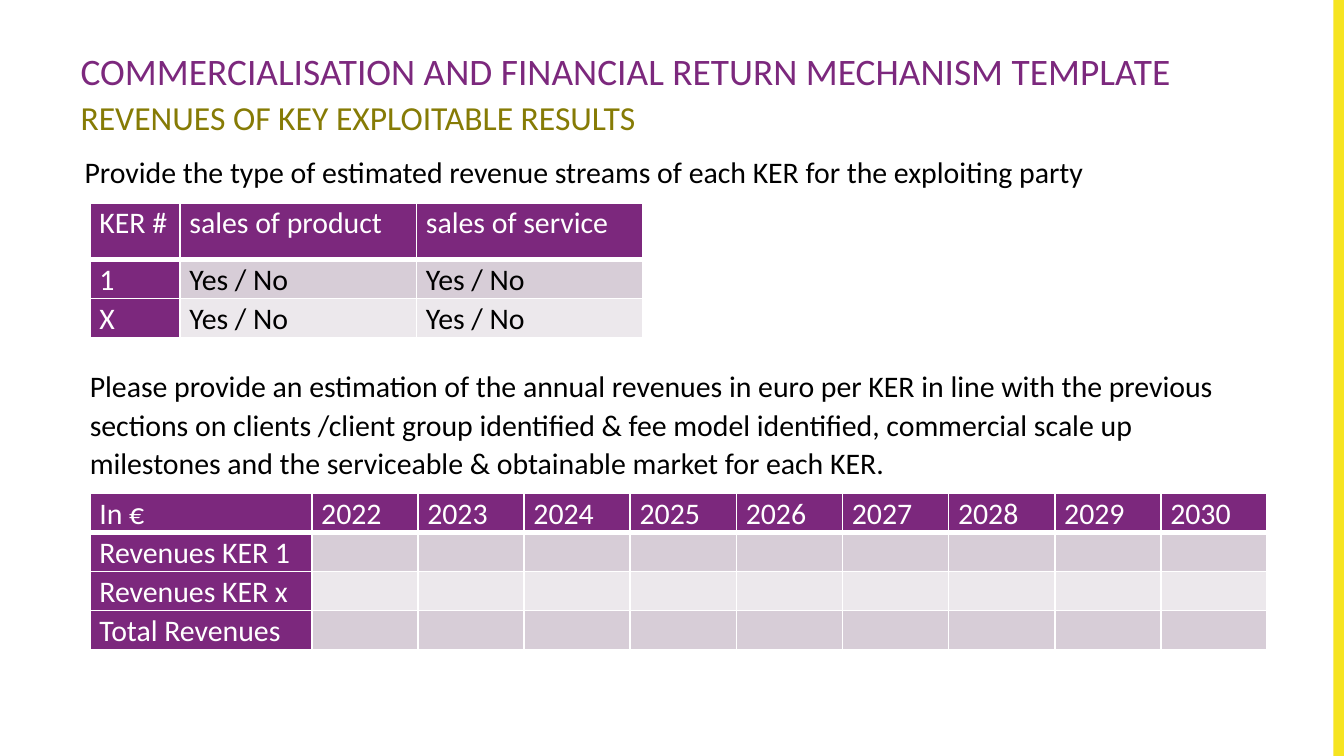
from lxml.etree import SubElement
from pptx import Presentation
from pptx.dml.color import RGBColor
from pptx.enum.shapes import MSO_SHAPE
from pptx.enum.text import MSO_ANCHOR, MSO_AUTO_SIZE, PP_ALIGN
from pptx.oxml.ns import qn
from pptx.util import Inches, Pt

COLOURS = {
    "purple": "7C287D", "olive": "867B05", "yellow": "F6E421",
    "black": "000000", "white": "FFFFFF",
    "dark band": "D7CDD7", "light band": "ECE8EC",
}
PAGE_WIDTH = Inches(10)
PAGE_HEIGHT = PAGE_WIDTH * 9 // 16
FONT = "Calibri"
TEXT_SIZE = 16
CELL_FORMAT = {
    "margin_left": Inches(0.07), "margin_right": Inches(0.07),
    "margin_top": 0, "margin_bottom": 0,
}
FRAME_FORMAT = {"word_wrap": True, "auto_size": MSO_AUTO_SIZE.NONE}
TITLE_FORMAT = FRAME_FORMAT | {
    "vertical_anchor": MSO_ANCHOR.MIDDLE, "margin_bottom": Inches(0.11)}
PLAIN_PARA = {"alignment": PP_ALIGN.LEFT, "space_before": Pt(0)}
LOOSE_PARA = {"line_spacing": 1.07, "space_after": Pt(8)}


def colour(name):
    return RGBColor.from_string(COLOURS[name])


def apply(target, values):
    for name, value in values.items():
        setattr(target, name, value)


def place(box, left, top, width, height):
    apply(box, {"left": Inches(left), "top": Inches(top),
                "width": Inches(width), "height": Inches(height)})


def add_span(para, text, colour_name, size=TEXT_SIZE):
    span = para.add_run()
    span.text = text
    apply(span.font, {"name": FONT, "size": Pt(size), "bold": False})
    span.font.color.rgb = colour(colour_name)


def add_side_bar(page):
    bar = page.shapes.add_shape(
        MSO_SHAPE.RECTANGLE, Inches(9.92), 0, Inches(0.08), PAGE_HEIGHT)
    bar.shadow.inherit = False
    bar.fill.solid()
    bar.fill.fore_color.rgb = colour("yellow")
    bar.line.fill.background()


def fill_title(page, heading, subheading):
    box = page.shapes.title
    place(box, 0.5, 0.23, 9.22, 0.94)
    apply(box.text_frame, TITLE_FORMAT)
    para = box.text_frame.paragraphs[0]
    apply(para, PLAIN_PARA | {"line_spacing": 1.1})
    add_span(para, heading, "purple", 20)
    para.add_line_break()
    add_span(para, subheading, "olive", 18)


def fill_body(page, text):
    box = page.placeholders[1]
    place(box, 0.53, 1.09, 9.23, 0.37)
    apply(box.text_frame, FRAME_FORMAT)
    para = box.text_frame.paragraphs[0]
    properties = para._p.get_or_add_pPr()
    properties.set("marL", "0")
    properties.set("indent", "0")
    SubElement(properties, qn("a:buNone"))
    apply(para, PLAIN_PARA | {"level": 1})
    add_span(para, text, "black")


def add_text(page, text, left, top, width, height):
    box = page.shapes.add_textbox(
        Inches(left), Inches(top), Inches(width), Inches(height))
    apply(box.text_frame, FRAME_FORMAT)
    para = box.text_frame.paragraphs[0]
    apply(para, LOOSE_PARA)
    add_span(para, text, "black")


def add_borders(cell, top, bottom):
    """Draw white cell borders; top and bottom are widths in points."""
    properties = cell._tc.get_or_add_tcPr()
    for side, width in {"L": 1, "R": 1, "T": top, "B": bottom}.items():
        line = SubElement(properties, qn(f"a:ln{side}"), w=str(Pt(width)))
        fill = SubElement(line, qn("a:solidFill"))
        SubElement(fill, qn("a:srgbClr"), val=COLOURS["white"])


def format_cell(cell, text, row, column):
    is_header = row == 0 or column == 0
    apply(cell, CELL_FORMAT)
    add_borders(cell, top=3 if row == 1 else 1, bottom=3 if row == 0 else 1)
    band = "dark band" if row % 2 else "light band"
    cell.fill.solid()
    cell.fill.fore_color.rgb = colour("purple" if is_header else band)
    para = cell.text_frame.paragraphs[0]
    apply(para, LOOSE_PARA)
    if text:
        add_span(para, text, "white" if is_header else "black")
    else:
        para._p.get_or_add_endParaRPr().set("sz", str(TEXT_SIZE * 100))


def add_grid(page, left, top, widths, heights, rows):
    table = page.shapes.add_table(
        len(rows), len(widths), Inches(left), Inches(top),
        Inches(sum(widths)), Inches(sum(heights))).table
    apply(table, {"first_row": False, "horz_banding": False})
    for column, width in zip(table.columns, widths):
        column.width = Inches(width)
    for line, height in zip(table.rows, heights):
        line.height = Inches(height)
    for row, texts in enumerate(rows):
        for column, text in enumerate(texts):
            format_cell(table.cell(row, column), text, row, column)


def main():
    deck = Presentation()
    apply(deck, {"slide_width": PAGE_WIDTH, "slide_height": PAGE_HEIGHT})
    page = deck.slides.add_slide(deck.slide_layouts[1])

    add_side_bar(page)
    fill_title(page, "COMMERCIALISATION AND FINANCIAL RETURN MECHANISM TEMPLATE",
               "REVENUES OF KEY EXPLOITABLE RESULTS")
    fill_body(page, "Provide the type of estimated revenue streams of each KER "
                    "for the exploiting party")

    streams = [["KER #", "sales of product", "sales of service"]]
    streams += [[ker, "Yes / No", "Yes / No"] for ker in ("1", "X")]
    add_grid(page, 0.67, 1.51, [0.67, 1.76, 1.68], [0.42, 0.29, 0.29], streams)

    add_text(page, "Please provide an estimation of the annual revenues in euro "
                   "per KER in line with the previous sections on clients /client "
                   "group identified & fee model identified, commercial scale up "
                   "milestones and the serviceable & obtainable market for each "
                   "KER.", 0.57, 2.67, 8.67, 0.95)

    years = [str(year) for year in range(2022, 2031)]
    revenues = [["In €"] + years]
    revenues += [[label] + [""] * len(years) for label in
                 ("Revenues KER 1", "Revenues KER x", "Total Revenues")]
    add_grid(page, 0.67, 3.67, [1.65] + [0.79] * len(years),
             [0.28] * len(revenues), revenues)

    deck.save("out.pptx")


if __name__ == "__main__":
    main()
